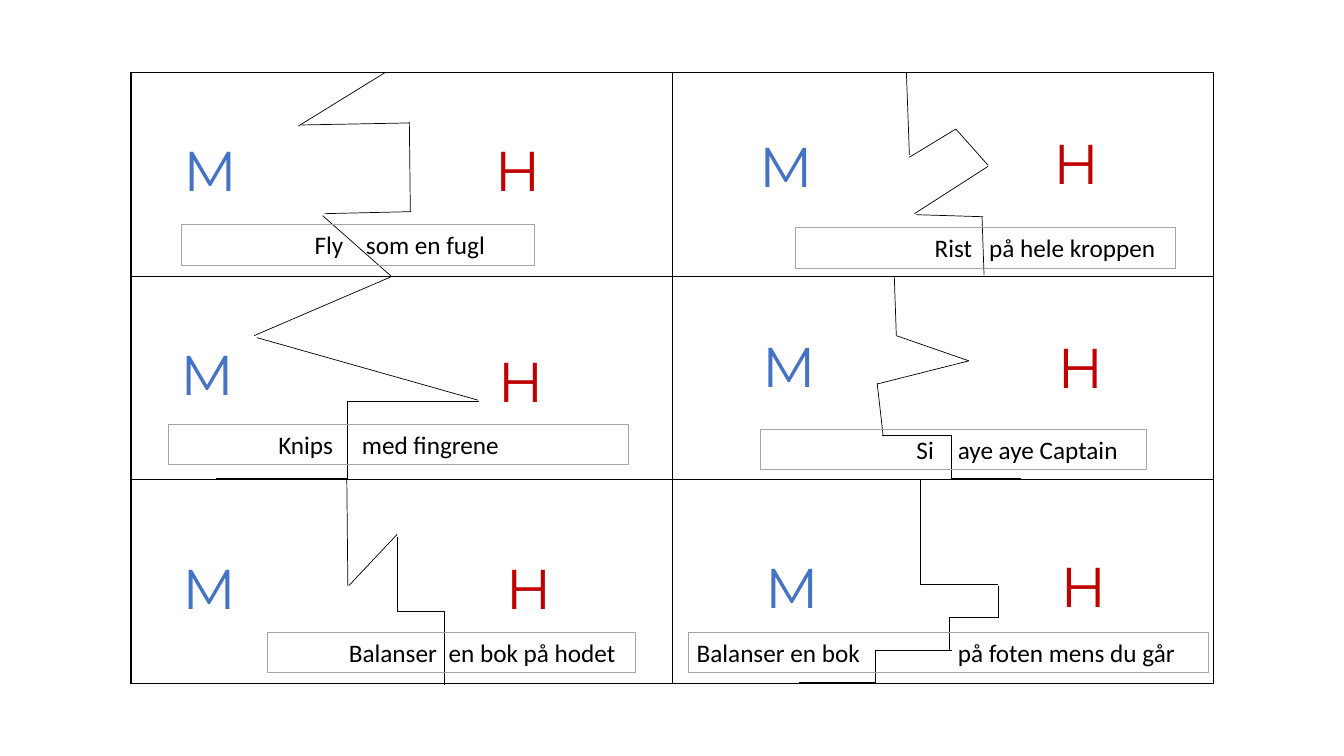
"""Build a slide of six movement cards, each split by a jagged line between M and H."""
from lxml import etree
from pptx import Presentation
from pptx.dml.color import RGBColor
from pptx.enum import shapes, text
from pptx.oxml.ns import qn
from pptx.util import Inches, Pt

BLACK = RGBColor(0x00, 0x00, 0x00)
BLUE = RGBColor(0x44, 0x72, 0xC4)
RED = RGBColor(0xC0, 0x00, 0x00)
GRAY = RGBColor(0xA5, 0xA5, 0xA5)

SLIDE_SIZE = (13.33, 7.5)
GRID_LEFT, GRID_TOP = 1.3, 0.72
CARD_WIDTH, CARD_HEIGHT = 5.37, 2.02
ROWS, COLUMNS = 3, 2
LETTER_HEIGHT, CAPTION_HEIGHT = 0.77, 0.4
STRAIGHT, ELBOW, UPRIGHT = "straight", "elbow", "upright"

LETTERS = {
    "M": {"width": 1.2, "font": {"name": "Montserrat", "size": Pt(40), "color": BLUE}},
    "H": {"width": 0.89, "font": {"name": "Montserrat", "size": Pt(40), "color": RED}},
}
CAPTION_FONT = {"name": "Calibri", "size": Pt(18), "color": BLACK}

# All card lengths are inches from the top left corner of the card.
CARDS = [
    {"cell": (0, 0), "M": (0.42, 0.58), "H": (3.51, 0.58),
     "words": ("Fly", "som en fugl"), "box": (0.5, 1.51, 3.5), "start": 1.32, "gap": 0.51,
     "cut": [(STRAIGHT, 2.52, 0, 1.66, 0.53), (STRAIGHT, 1.69, 0.52, 2.76, 0.5),
             (STRAIGHT, 2.76, 0.49, 2.77, 1.38), (STRAIGHT, 2.78, 1.38, 1.92, 1.4),
             (STRAIGHT, 1.9, 1.42, 2.58, 2.02)]},
    {"cell": (0, 1), "M": (0.76, 0.54), "H": (3.68, 0.51),
     "words": ("Rist", "på hele kroppen"), "box": (1.22, 1.54, 3.77), "start": 1.38, "gap": 0.54,
     "cut": [(STRAIGHT, 2.32, 0, 2.35, 0.82), (STRAIGHT, 2.35, 0.84, 2.81, 0.56),
             (STRAIGHT, 2.81, 0.56, 3.13, 0.92), (STRAIGHT, 3.13, 0.93, 2.4, 1.4),
             (STRAIGHT, 2.42, 1.41, 3.08, 1.43), (STRAIGHT, 3.07, 1.43, 3.09, 2.01)]},
    {"cell": (1, 0), "M": (0.39, 0.58), "H": (3.54, 0.65),
     "words": ("Knips", "med fingrene"), "box": (0.37, 1.47, 4.56), "start": 1.09, "gap": 0.83,
     "cut": [(STRAIGHT, 2.57, 0.01, 1.22, 0.59), (STRAIGHT, 1.25, 0.61, 3.44, 1.23),
             (ELBOW, 3.45, 1.24, 0.84, 2.01)]},
    {"cell": (1, 1), "M": (0.79, 0.5), "H": (3.72, 0.51),
     "words": ("Si", "aye aye Captain"), "box": (0.87, 1.52, 3.83), "start": 1.55, "gap": 0.41,
     "cut": [(STRAIGHT, 2.2, 0, 2.22, 0.59), (STRAIGHT, 2.22, 0.59, 2.94, 0.84),
             (STRAIGHT, 2.94, 0.84, 2.03, 1.07), (STRAIGHT, 2.03, 1.06, 2.09, 1.59),
             (ELBOW, 2.08, 1.58, 3.46, 2.01)]},
    {"cell": (2, 0), "M": (0.41, 0.68), "H": (3.62, 0.68),
     "words": ("Balanser", "en bok på hodet"), "box": (1.35, 1.51, 3.65), "start": 0.81, "gap": 0.99,
     "cut": [(STRAIGHT, 2.14, 0, 2.15, 1.05), (STRAIGHT, 2.16, 1.05, 2.64, 0.54),
             (UPRIGHT, 2.64, 0.57, 3.11, 2.04)]},
    {"cell": (2, 1), "M": (0.82, 0.67), "H": (3.75, 0.66),
     "words": ("Balanser en bok", "på foten mens du går"), "box": (0.16, 1.51, 5.16),
     "start": 0.08, "gap": 2.59,
     "cut": [(ELBOW, 1.69, 0, 3.23, 1.04), (UPRIGHT, 3.23, 1.05, 2.75, 1.69),
             (ELBOW, 2.77, 1.69, 1.25, 2.01)]},
]


def place(card, left, top):
    row, column = card["cell"]
    return GRID_LEFT + column * CARD_WIDTH + left, GRID_TOP + row * CARD_HEIGHT + top


def write(shape, words, font):
    frame = shape.text_frame
    frame.word_wrap = True
    frame.auto_size = text.MSO_AUTO_SIZE.SHAPE_TO_FIT_TEXT
    paragraph = frame.paragraphs[0]
    paragraph.alignment = text.PP_ALIGN.LEFT
    run = paragraph.add_run()
    run.text = words
    for name, value in font.items():
        if name == "color":
            run.font.color.rgb = value
        else:
            setattr(run.font, name, value)
    return frame, paragraph


def add_grid(slide):
    size = (GRID_LEFT, GRID_TOP, COLUMNS * CARD_WIDTH, ROWS * CARD_HEIGHT)
    table = slide.shapes.add_table(ROWS, COLUMNS, *map(Inches, size)).table
    for cell in table.iter_cells():
        properties = cell._tc.get_or_add_tcPr()
        for side in ("a:lnL", "a:lnR", "a:lnT", "a:lnB"):
            border = etree.SubElement(properties, qn(side), w=str(Pt(1)))
            fill = etree.SubElement(border, qn("a:solidFill"))
            etree.SubElement(fill, qn("a:srgbClr"), val=str(BLACK))
        cell.fill.background()


def add_cut(slide, card, kind, *ends):
    x1, y1 = place(card, *ends[:2])
    x2, y2 = place(card, *ends[2:])
    if kind == UPRIGHT:
        middle_x, middle_y = (x1 + x2) / 2, (y1 + y2) / 2
        half_x, half_y = (y2 - y1) / 2, (x1 - x2) / 2
        x1, x2 = middle_x - half_x, middle_x + half_x
        y1, y2 = middle_y - half_y, middle_y + half_y
    style = shapes.MSO_CONNECTOR.STRAIGHT if kind == STRAIGHT else shapes.MSO_CONNECTOR.ELBOW
    connector = slide.shapes.add_connector(style, *map(Inches, (x1, y1, x2, y2)))
    connector.line.color.rgb = BLACK
    connector.line.width = Pt(0.5)
    properties = connector._element.spPr
    etree.SubElement(properties, qn("a:effectLst"))
    if kind == UPRIGHT:
        properties.find(qn("a:xfrm")).set("rot", str(90 * 60000))


def add_letter(slide, card, letter):
    size = (LETTERS[letter]["width"], LETTER_HEIGHT)
    box = slide.shapes.add_textbox(*map(Inches, place(card, *card[letter]) + size))
    write(box, letter, LETTERS[letter]["font"])


def add_caption(slide, card):
    left, top, width = card["box"]
    bounds = place(card, left, top) + (width, CAPTION_HEIGHT)
    box = slide.shapes.add_shape(shapes.MSO_SHAPE.RECTANGLE, *map(Inches, bounds))
    box.shadow.inherit = False
    box.fill.background()
    box.line.color.rgb = GRAY
    box.line.width = Pt(0.5)
    frame, paragraph = write(box, "\t".join(card["words"]), CAPTION_FONT)
    frame.margin_left = Inches(card["start"])
    frame.margin_right = 0
    tabs = etree.SubElement(paragraph._p.get_or_add_pPr(), qn("a:tabLst"))
    etree.SubElement(tabs, qn("a:tab"), pos=str(Inches(card["gap"])), algn="l")


def main():
    presentation = Presentation()
    presentation.slide_width, presentation.slide_height = map(Inches, SLIDE_SIZE)
    slide = presentation.slides.add_slide(presentation.slide_layouts[6])
    add_grid(slide)
    for card in CARDS:
        for piece in card["cut"]:
            add_cut(slide, card, *piece)
    for letter in LETTERS:
        for card in CARDS:
            add_letter(slide, card, letter)
    for card in CARDS:
        add_caption(slide, card)
    presentation.save("out.pptx")


if __name__ == "__main__":
    main()
